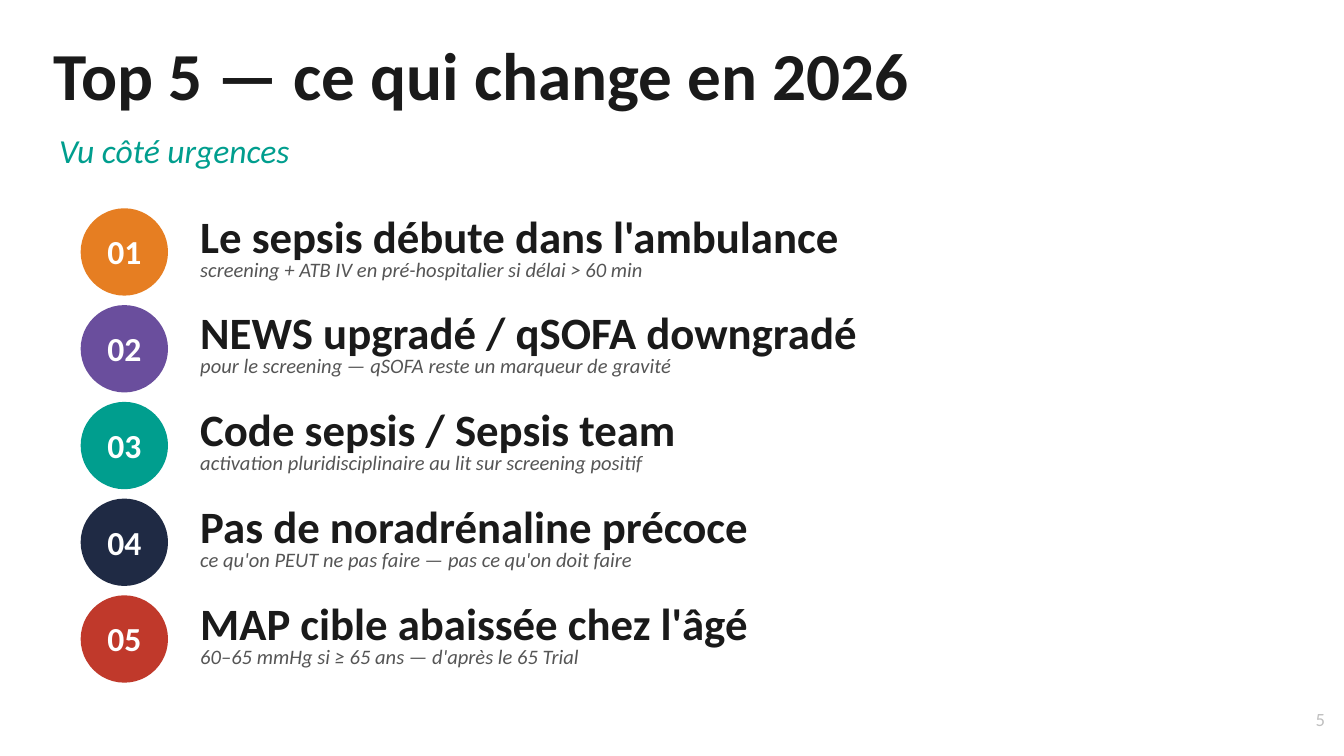
from pptx import Presentation
from pptx.dml.color import RGBColor
from pptx.enum import shapes, text
from pptx.util import Inches, Pt

FONT = "Calibri"
INK = RGBColor(0x1A, 0x1A, 0x1A)
GREY = RGBColor(0x55, 0x55, 0x55)
LIGHT_GREY = RGBColor(0xC0, 0xC0, 0xC0)
WHITE = RGBColor(0xFF, 0xFF, 0xFF)
ORANGE = RGBColor(0xE6, 0x7E, 0x22)
PURPLE = RGBColor(0x6A, 0x4E, 0x9D)
TEAL = RGBColor(0x00, 0x9E, 0x8E)
NAVY = RGBColor(0x1F, 0x2A, 0x44)
RED = RGBColor(0xC0, 0x39, 0x2B)

SLIDE_WIDTH = 10
FIRST_TOP = 1.55
ROW_STEP = 0.72
BADGE_LEFT = 0.6
BADGE_SIZE = 0.65
CHANGES = [
    (ORANGE, "Le sepsis débute dans l'ambulance",
     "screening + ATB IV en pré-hospitalier si délai > 60 min"),
    (PURPLE, "NEWS upgradé / qSOFA downgradé",
     "pour le screening — qSOFA reste un marqueur de gravité"),
    (TEAL, "Code sepsis / Sepsis team",
     "activation pluridisciplinaire au lit sur screening positif"),
    (NAVY, "Pas de noradrénaline précoce",
     "ce qu'on PEUT ne pas faire — pas ce qu'on doit faire"),
    (RED, "MAP cible abaissée chez l'âgé",
     "60–65 mmHg si ≥ 65 ans — d'après le 65 Trial"),
]


def write_text(shape, wording, size, color, bold=False, italic=False,
               align=text.PP_ALIGN.LEFT, anchor=text.MSO_ANCHOR.TOP,
               margins=(0.04, 0.02), wrap=True):
    frame = shape.text_frame
    frame.word_wrap = wrap
    frame.auto_size = text.MSO_AUTO_SIZE.SHAPE_TO_FIT_TEXT
    frame.vertical_anchor = anchor
    frame.margin_left = frame.margin_right = Inches(margins[0])
    frame.margin_top = frame.margin_bottom = Inches(margins[1])
    paragraph = frame.paragraphs[0]
    paragraph.alignment = align
    run = paragraph.add_run()
    run.text = wording
    run.font.name = FONT
    run.font.size = Pt(size)
    run.font.bold = bold
    run.font.italic = italic
    run.font.color.rgb = color


def add_title(slide, wording):
    title = slide.shapes.title
    title.left, title.top = Inches(0.4), Inches(0.25)
    title.width, title.height = Inches(6.44), Inches(0.61)
    write_text(title, wording, 36, INK, bold=True, margins=(0, 0), wrap=False)


def add_label(slide, left, top, width, height, wording, size, color, **style):
    box = slide.shapes.add_textbox(
        Inches(left), Inches(top), Inches(width), Inches(height))
    write_text(box, wording, size, color, **style)


def add_badge(slide, top, number, color):
    badge = slide.shapes.add_shape(
        shapes.MSO_SHAPE.OVAL, Inches(BADGE_LEFT), Inches(top),
        Inches(BADGE_SIZE), Inches(BADGE_SIZE))
    badge.shadow.inherit = False
    badge.fill.solid()
    badge.fill.fore_color.rgb = color
    badge.line.fill.background()
    add_label(slide, BADGE_LEFT, top + 0.15, BADGE_SIZE, 0.34,
              f"{number:02d}", 18, WHITE, bold=True,
              align=text.PP_ALIGN.CENTER, anchor=text.MSO_ANCHOR.MIDDLE)


def add_change(slide, number, color, heading, detail):
    top = FIRST_TOP + (number - 1) * ROW_STEP
    add_badge(slide, top, number, color)
    add_label(slide, 1.45, top - 0.02, 8, 0.45, heading, 24, INK, bold=True)
    add_label(slide, 1.45, top + 0.34, 8, 0.23, detail, 11, GREY, italic=True)


def main():
    presentation = Presentation()
    presentation.slide_width = Inches(SLIDE_WIDTH)
    presentation.slide_height = Inches(SLIDE_WIDTH * 9 / 16)
    slide = presentation.slides.add_slide(presentation.slide_layouts[5])
    slide.background.fill.solid()
    slide.background.fill.fore_color.rgb = WHITE

    add_title(slide, "Top 5 — ce qui change en 2026")
    add_label(slide, 0.4, 0.95, 9, 0.34, "Vu côté urgences", 18, TEAL,
              italic=True)
    for number, change in enumerate(CHANGES, 1):
        add_change(slide, number, *change)
    add_label(slide, 9.6, 5.25, 0.3, 0.21, "5", 10, LIGHT_GREY,
              align=text.PP_ALIGN.RIGHT)
    presentation.save("out.pptx")


if __name__ == "__main__":
    main()
